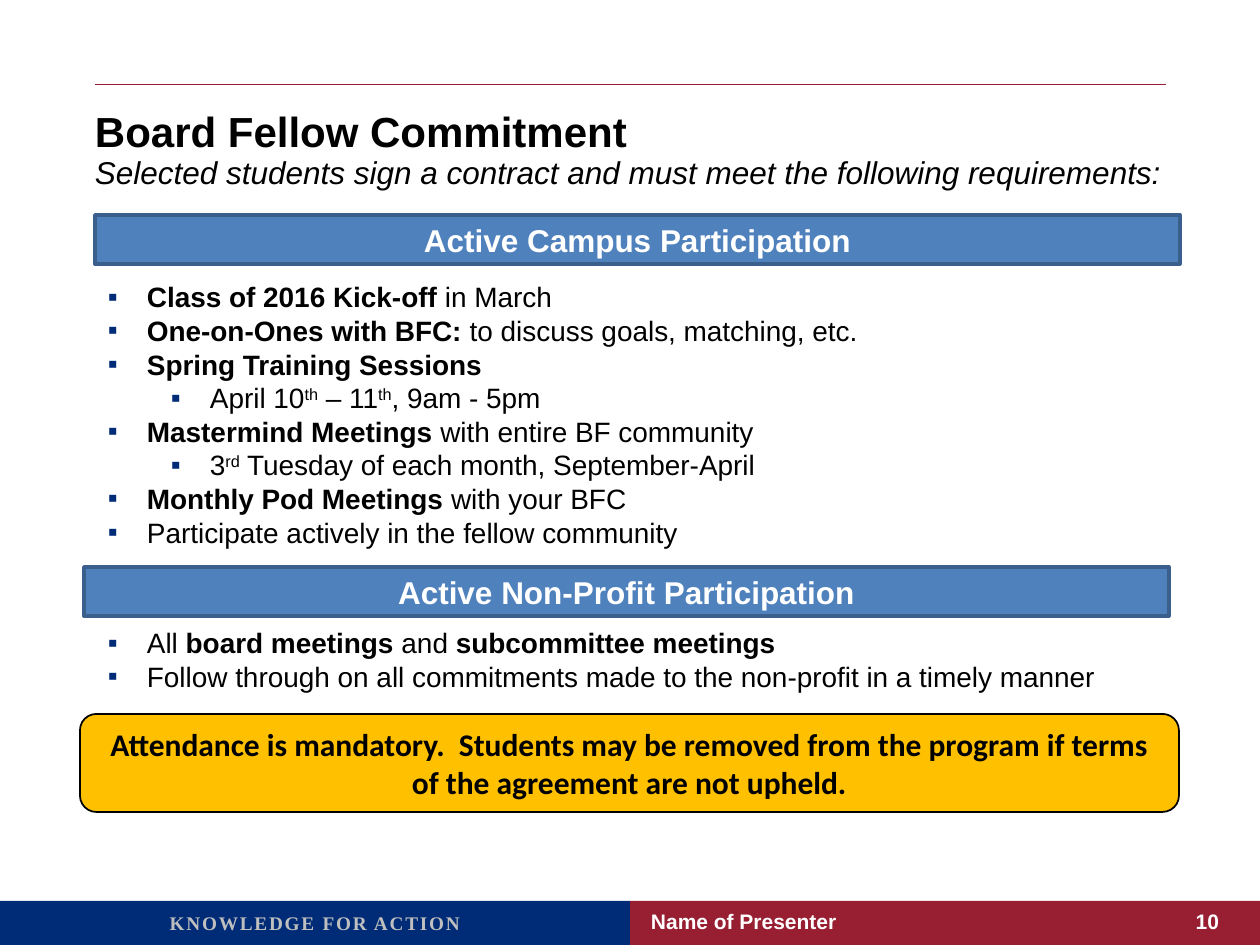
import pptx
import pptx.util
import pptx.dml.color
import pptx.enum.shapes
import pptx.enum.text
import pptx.oxml
import pptx.oxml.ns

SCALE = 914400 / 126
SHAPE = pptx.enum.shapes.MSO_SHAPE
ALIGN = pptx.enum.text.PP_ALIGN
ANCHOR = pptx.enum.text.MSO_ANCHOR
SIDES = ("margin_left", "margin_top", "margin_right", "margin_bottom")


class Theme:
    navy, crimson, blue, blue_edge = "002C77", "981E32", "4F81BD", "3A5F8C"
    amber, ink, paper, silver = "FFC000", "000000", "FFFFFF", "BFBFBF"
    title = {"name": "Arial", "size": 24, "bold": True, "color": ink}
    subtitle = {"name": "Arial", "size": 18, "italic": True, "color": ink}
    banner = {"name": "Arial", "size": 18, "bold": True, "color": paper}
    body = {"name": "Arial", "size": 16, "bold": False, "color": ink}
    callout = {"name": "Calibri", "size": 18, "bold": True, "color": ink}
    motto = {"name": "Times New Roman", "size": 11, "bold": True, "color": silver}
    footer = {"name": "Arial", "size": 12, "bold": True, "color": paper}


BOLD = {"bold": True}
RAISED = {"baseline": 30000}

CAMPUS_DUTIES = [
    (0, [("Class of 2016 Kick-off ", BOLD), ("in March", {})]),
    (0, [("One-on-Ones with BFC: ", BOLD), ("to discuss goals, matching, etc.", {})]),
    (0, [("Spring Training Sessions", BOLD)]),
    (1, [("April 10", {}), ("th", RAISED), (" – 11", {}), ("th", RAISED),
         (", 9am - 5pm", {})]),
    (0, [("Mastermind Meetings ", BOLD), ("with entire BF community", {})]),
    (1, [("3", {}), ("rd", RAISED), (" Tuesday of each month, September-April", {})]),
    (0, [("Monthly Pod Meetings ", BOLD), ("with your BFC", {})]),
    (0, [("Participate actively in the fellow community", {})]),
]
NONPROFIT_DUTIES = [
    (0, [("All ", {}), ("board meetings ", BOLD), ("and ", {}),
         ("subcommittee meetings", BOLD)]),
    (0, [("Follow through on all commitments made to the non-profit in a timely manner", {})]),
]


def px(length):
    return pptx.util.Emu(round(length * SCALE))


def rgb(code):
    return pptx.dml.color.RGBColor.from_string(code)


def add_run(paragraph, words, style):
    run = paragraph.add_run()
    run.text = words
    for key, value in style.items():
        if key == "color":
            run.font.color.rgb = rgb(value)
        elif key in ("baseline", "spc"):
            run._r.get_or_add_rPr().set(key, str(value))
        else:
            setattr(run.font, key, pptx.util.Pt(value) if key == "size" else value)


def prepare_frame(frame, anchor=ANCHOR.TOP, insets=(13, 6, 13, 6)):
    settings = dict(zip(SIDES, map(px, insets)), word_wrap=True, vertical_anchor=anchor)
    for key, value in settings.items():
        setattr(frame, key, value)
    return frame


def add_label(slide, box, words, style, align=ALIGN.LEFT, **layout):
    label = slide.shapes.add_textbox(*map(px, box))
    paragraph = prepare_frame(label.text_frame, **layout).paragraphs[0]
    paragraph.alignment = align
    add_run(paragraph, words, style)


def add_panel(slide, box, kind, fill, edge=None, edge_width=1):
    panel = slide.shapes.add_shape(kind, *map(px, box))
    panel.shadow.inherit = False
    panel.fill.solid()
    panel.fill.fore_color.rgb = rgb(fill)
    if edge:
        panel.line.color.rgb = rgb(edge)
        panel.line.width = pptx.util.Pt(edge_width)
    else:
        panel.line.fill.background()
    return panel


def write_panel(panel, words, style):
    paragraph = prepare_frame(panel.text_frame, ANCHOR.MIDDLE).paragraphs[0]
    paragraph.alignment = ALIGN.CENTER
    add_run(paragraph, words, style)


def add_bullet(paragraph, level):
    properties = paragraph._p.get_or_add_pPr()
    for key, value in {"marL": px(39 + 63 * level), "indent": px(-39), "lvl": level}.items():
        properties.set(key, str(int(value)))
    space = pptx.oxml.ns.nsdecls("a")
    for markup in (f'<a:buClr {space}><a:srgbClr val="{Theme.navy}"/></a:buClr>',
                   f'<a:buFont {space} typeface="Arial"/>',
                   f'<a:buChar {space} char="▪"/>'):
        properties.append(pptx.oxml.parse_xml(markup))


def heading(slide, box):
    left, top, width, height = box
    rule = slide.shapes.add_connector(
        pptx.enum.shapes.MSO_CONNECTOR.STRAIGHT,
        px(left), px(top), px(left + width), px(top))
    rule.line.color.rgb = rgb(Theme.crimson)
    rule.line.width = pptx.util.Pt(0.5)
    rule._element.spPr.append(
        pptx.oxml.parse_xml(f'<a:effectLst {pptx.oxml.ns.nsdecls("a")}/>'))
    add_label(slide, (left, top + 21, width, height - 21), "Board Fellow Commitment",
              Theme.title, insets=(0, 0, 0, 0))
    add_label(slide, (left - 13, top + 63, width + 48, 50),
              "Selected students sign a contract and must meet the following requirements:",
              Theme.subtitle)


def banner(slide, box, words):
    panel = add_panel(slide, box, SHAPE.RECTANGLE, Theme.blue, Theme.blue_edge, 2)
    write_panel(panel, words, Theme.banner)


def duty_list(slide, box, duties):
    frame = prepare_frame(slide.shapes.add_textbox(*map(px, box)).text_frame)
    for index, (level, runs) in enumerate(duties):
        paragraph = frame.add_paragraph() if index else frame.paragraphs[0]
        add_bullet(paragraph, level)
        for words, emphasis in runs:
            add_run(paragraph, words, {**Theme.body, **emphasis})


def callout(slide, box):
    panel = add_panel(slide, box, SHAPE.ROUNDED_RECTANGLE, Theme.amber, Theme.ink)
    write_panel(panel, "Attendance is mandatory.  Students may be removed from the program "
                "if terms of the agreement are not upheld.", Theme.callout)


def footer(slide, box):
    left, top, width, height = box
    half = width // 2
    middle = left + half
    add_panel(slide, (middle, top, half, height), SHAPE.RECTANGLE, Theme.crimson)
    add_panel(slide, (left, top, half, height), SHAPE.RECTANGLE, Theme.navy)
    add_label(slide, (left, top + 4, half, 36), "KNOWLEDGE FOR ACTION",
              {**Theme.motto, "spc": 100}, ALIGN.CENTER)
    add_label(slide, (middle + 21, top, 473, 41), "Name of Presenter", Theme.footer,
              anchor=ANCHOR.MIDDLE, insets=(0, 0, 0, 0))
    add_label(slide, (middle + 514, top, 106, 41), "10", Theme.footer, ALIGN.RIGHT,
              anchor=ANCHOR.MIDDLE, insets=(0, 6, 31, 6))


def main():
    deck = pptx.Presentation()
    deck.slide_width, deck.slide_height = px(1260), px(945)
    slide = deck.slides.add_slide(deck.slide_layouts[6])
    footer(slide, (0, 901, 1260, 44))
    heading(slide, (95, 84, 1071, 126))
    duty_list(slide, (95, 274, 1085, 285), CAMPUS_DUTIES)
    duty_list(slide, (95, 620, 1074, 115), NONPROFIT_DUTIES)
    callout(slide, (80, 714, 1099, 98))
    banner(slide, (95, 215, 1085, 49), "Active Campus Participation")
    banner(slide, (84, 567, 1085, 49), "Active Non-Profit Participation")
    deck.save("out.pptx")


if __name__ == "__main__":
    main()
